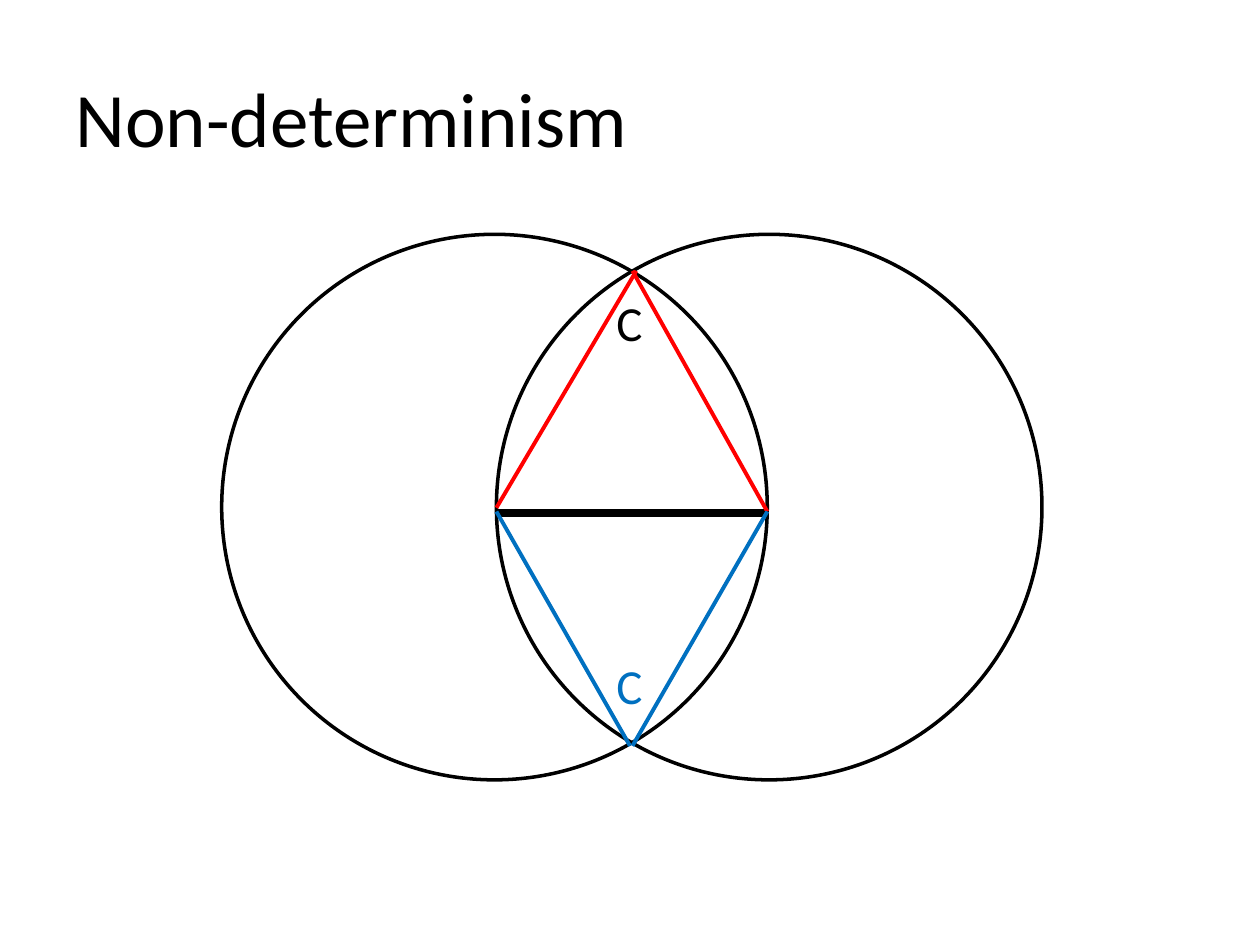
from dataclasses import dataclass

from lxml.etree import SubElement
from pptx import Presentation
from pptx.dml.color import RGBColor
from pptx.enum.shapes import MSO_CONNECTOR as Link, MSO_SHAPE as Kind
from pptx.enum.text import MSO_ANCHOR as Anchor, MSO_AUTO_SIZE as Fit, PP_ALIGN as Align
from pptx.oxml.ns import qn
from pptx.util import Inches, Pt

BLACK, RED, BLUE = "000000", "FF0000", "0070C0"
SIZE = 4.33


@dataclass
class Edge:
    x1: float
    y1: float
    x2: float
    y2: float
    color: str
    width: float = 2.25


@dataclass
class Ring:
    left: float
    top: float = 1.86


@dataclass
class Label:
    top: float
    color: str


BASE = Edge(3.94, 4.07, 6.1, 4.07, BLACK, 4.5)
RINGS = [Ring(3.94), Ring(1.76)]
UPPER = [Edge(5.02, 2.15, 6.09, 4.06, RED), Edge(5.05, 2.15, 3.94, 4.03, RED)]
LOWER = [Edge(5, 5.92, 3.94, 4.06, BLUE), Edge(5.02, 5.92, 6.09, 4.06, BLUE)]
LABELS = [Label(2.27, BLACK), Label(5.15, BLUE)]


def rgb(color: str) -> RGBColor:
    return RGBColor.from_string(color)


def apply(item, form: dict) -> None:
    for name, value in form.items():
        setattr(item, name, value)


def style(para, size: float, color: str, align) -> None:
    para.alignment = align
    apply(para.font, {"name": "Calibri", "size": Pt(size)})
    para.font.color.rgb = rgb(color)


def stroke(line, color: str, width: float) -> None:
    line.color.rgb = rgb(color)
    line.width = Pt(width)


def draw_edge(slide, edge: Edge) -> None:
    ends = map(Inches, (edge.x1, edge.y1, edge.x2, edge.y2))
    line = slide.shapes.add_connector(Link.STRAIGHT, *ends)
    stroke(line.line, edge.color, edge.width)
    SubElement(line.element.spPr, qn("a:effectLst"))


def draw_ring(group, ring: Ring) -> None:
    box = map(Inches, (ring.left, ring.top, SIZE, SIZE))
    shape = group.shapes.add_shape(Kind.OVAL, *box)
    shape.shadow.inherit = False
    shape.fill.background()
    stroke(shape.line, BLACK, 2)


def draw_label(slide, label: Label) -> None:
    box = map(Inches, (4.76, label.top, 0.47, 0.57))
    frame = slide.shapes.add_textbox(*box).text_frame
    apply(frame, {"text": "C", "word_wrap": True, "auto_size": Fit.SHAPE_TO_FIT_TEXT})
    style(frame.paragraphs[0], 28, label.color, Align.CENTER)


def draw_title(slide, text: str) -> None:
    title = slide.shapes.title
    apply(title, {"left": Inches(0.5), "top": Inches(0.3),
                  "width": Inches(9), "height": Inches(1.25)})
    frame = title.text_frame
    apply(frame, {"text": text, "vertical_anchor": Anchor.MIDDLE, "word_wrap": True})
    style(frame.paragraphs[0], 44, BLACK, Align.LEFT)


def main() -> None:
    deck = Presentation()
    apply(deck, {"slide_width": Inches(10), "slide_height": Inches(7.5)})
    slide = deck.slides.add_slide(deck.slide_layouts[5])
    draw_edge(slide, BASE)
    group = slide.shapes.add_group_shape()
    for ring in RINGS:
        draw_ring(group, ring)
    for edge in UPPER + LOWER:
        draw_edge(slide, edge)
    draw_title(slide, "Non-determinism")
    for label in LABELS:
        draw_label(slide, label)
    deck.save("out.pptx")


if __name__ == "__main__":
    main()
